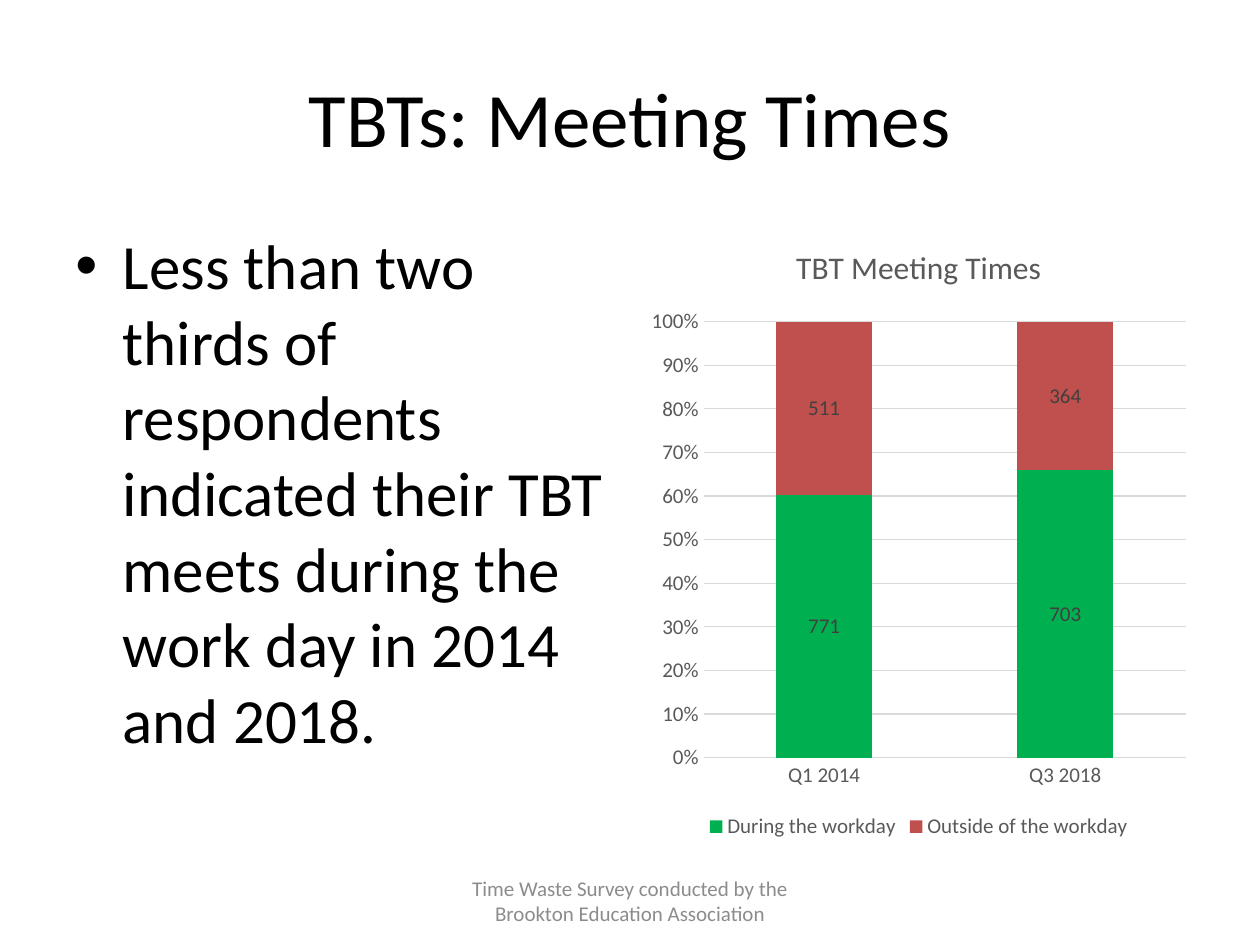
import lxml.etree
import pptx
import pptx.chart.data
import pptx.dml.color
import pptx.enum.chart
import pptx.enum.text
import pptx.oxml.ns
import pptx.util

Pt = pptx.util.Pt
RGBColor = pptx.dml.color.RGBColor
ALIGN = pptx.enum.text.PP_ALIGN
ANCHOR = pptx.enum.text.MSO_ANCHOR

BLACK = RGBColor(0x00, 0x00, 0x00)
FOOTER_GRAY = RGBColor(0x8C, 0x8C, 0x8C)
AXIS_GRAY = RGBColor(0x59, 0x59, 0x59)
LABEL_GRAY = RGBColor(0x40, 0x40, 0x40)
GRID_GRAY = RGBColor(0xD9, 0xD9, 0xD9)
GREEN = RGBColor(0x00, 0xB0, 0x50)
RED = RGBColor(0xC0, 0x50, 0x4D)
FONT = "Calibri"


def style_font(font, size, color):
    font.name = FONT
    font.size = Pt(size)
    font.bold = False
    font.color.rgb = color


def add_text(slide, text, left, top, width, height, size, color=BLACK,
             align=ALIGN.LEFT, anchor=ANCHOR.TOP, bullet_indent=None):
    """Add a wrapped text box; bullet_indent is the hanging indent in points."""
    frame = slide.shapes.add_textbox(Pt(left), Pt(top), Pt(width), Pt(height)).text_frame
    frame.word_wrap = True
    frame.vertical_anchor = anchor
    paragraph = frame.paragraphs[0]
    paragraph.alignment = align
    run = paragraph.add_run()
    run.text = text
    style_font(run.font, size, color)
    if bullet_indent:
        properties = paragraph._p.get_or_add_pPr()
        properties.set("marL", str(Pt(bullet_indent)))
        properties.set("indent", str(-Pt(bullet_indent)))
        bullet_font = lxml.etree.SubElement(properties, pptx.oxml.ns.qn("a:buFont"))
        bullet_font.set("typeface", "Arial")
        bullet = lxml.etree.SubElement(properties, pptx.oxml.ns.qn("a:buChar"))
        bullet.set("char", "•")


presentation = pptx.Presentation()
presentation.slide_width = Pt(720)
presentation.slide_height = Pt(540)
slide = presentation.slides.add_slide(presentation.slide_layouts[6])

add_text(slide, "TBTs: Meeting Times", 36, 21.6, 648, 90, size=44,
         align=ALIGN.CENTER, anchor=ANCHOR.MIDDLE)
add_text(slide, "Less than two thirds of respondents indicated their TBT meets "
         "during the work day in 2014 and 2018.",
         36, 126, 318, 356.4, size=36, bullet_indent=27)

# Meeting times chart
meeting_data = pptx.chart.data.CategoryChartData()
meeting_data.categories = ["Q1 2014", "Q3 2018"]
meeting_data.add_series("During the workday", [771, 703])
meeting_data.add_series("Outside of the workday", [511, 364])
chart = slide.shapes.add_chart(
    pptx.enum.chart.XL_CHART_TYPE.COLUMN_STACKED_100,
    Pt(366), Pt(126), Pt(318), Pt(356.4), meeting_data).chart
style_font(chart.font, 10, BLACK)

chart.has_title = True
chart_title = chart.chart_title
chart_title.include_in_layout = False
chart_title.text_frame.text = "TBT Meeting Times"
style_font(chart_title.text_frame.paragraphs[0].runs[0].font, 18, AXIS_GRAY)

chart.has_legend = True
chart.legend.position = pptx.enum.chart.XL_LEGEND_POSITION.BOTTOM
chart.legend.include_in_layout = False
style_font(chart.legend.font, 12, AXIS_GRAY)

quarters, shares = chart.category_axis, chart.value_axis
for axis in (quarters, shares):
    axis.major_tick_mark = pptx.enum.chart.XL_TICK_MARK.NONE
    axis.minor_tick_mark = pptx.enum.chart.XL_TICK_MARK.NONE
    style_font(axis.tick_labels.font, 12, AXIS_GRAY)
shares.has_major_gridlines = True
shares.maximum_scale = 1
shares.major_unit = 0.1
shares.tick_labels.number_format = "0%"
shares.tick_labels.number_format_is_linked = False
shares.format.line.fill.background()
for line in (quarters.format.line, shares.major_gridlines.format.line):
    line.color.rgb = GRID_GRAY
    line.width = Pt(0.75)

columns = chart.plots[0]
columns.gap_width = 150
columns.overlap = 100
columns.vary_by_categories = False
for series, color in zip(columns.series, (GREEN, RED)):
    series.format.fill.solid()
    series.format.fill.fore_color.rgb = color
    series.data_labels.show_value = True
    style_font(series.data_labels.font, 12, LABEL_GRAY)

add_text(slide, "Time Waste Survey conducted by the Brookton Education Association",
         246, 500.4, 228, 28.8, size=12, color=FOOTER_GRAY,
         align=ALIGN.CENTER, anchor=ANCHOR.MIDDLE)

presentation.save("out.pptx")
